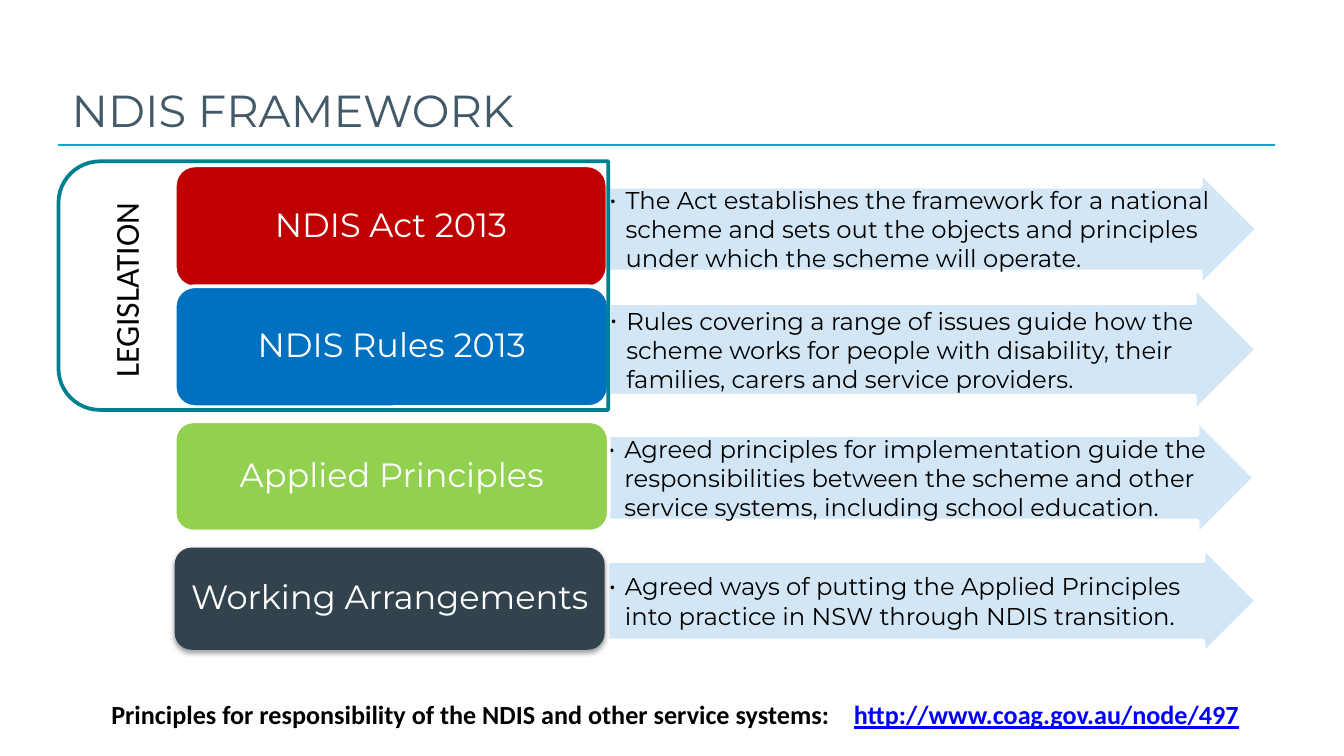
from lxml import etree
from pptx import Presentation
from pptx import util as u
from pptx.dml.color import RGBColor
from pptx.enum import shapes, text
from pptx.oxml import ns

TEAL = RGBColor(0x00, 0xAB, 0xC3)
FRAME = RGBColor(0x00, 0x7F, 0x90)
SLATE = RGBColor(0x42, 0x59, 0x68)
PALE = RGBColor(0xCF, 0xE4, 0xF4)
RED = RGBColor(0xC0, 0x00, 0x00)
BLUE = RGBColor(0x00, 0x70, 0xC0)
GREEN = RGBColor(0x92, 0xD0, 0x50)
DARK = RGBColor(0x32, 0x43, 0x4E)
LINK = RGBColor(0x00, 0x00, 0xFF)
WHITE = RGBColor(0xFF, 0xFF, 0xFF)
BLACK = RGBColor(0x00, 0x00, 0x00)

# The slide is a grid of square cells, 100 columns by 56.25 rows (16:9).
CELL = u.Inches(0.1)
kind = shapes.MSO_SHAPE
mid = text.MSO_ANCHOR.MIDDLE
deck = Presentation()
deck.slide_width, deck.slide_height = 100 * CELL, int(56.25 * CELL)
slide = deck.slides.add_slide(deck.slide_layouts[6])


def draw(form, area, fill=None, line=None):
    """Add a preset shape over an area (column, row, columns, rows)."""
    shape = slide.shapes.add_shape(form, *[int(n * CELL) for n in area])
    shape.shadow.inherit = False
    if fill is None:
        shape.fill.background()
    else:
        shape.fill.solid()
        shape.fill.fore_color.rgb = fill
    if line is None:
        shape.line.fill.background()
    else:
        shape.line.color.rgb = line
        shape.line.width = u.Pt(2)
    return shape


def write(words, area, size, color, face="Montserrat", align=None,
          anchor=text.MSO_ANCHOR.TOP, pad=(1, 0.5)):
    """Add a text box; pad is its side and top margin in cells."""
    box = slide.shapes.add_textbox(*[int(n * CELL) for n in area])
    frame = box.text_frame
    frame.word_wrap = True
    frame.vertical_anchor = anchor
    frame.margin_left = frame.margin_right = int(pad[0] * CELL)
    frame.margin_top = frame.margin_bottom = int(pad[1] * CELL)
    para = frame.paragraphs[0]
    para.text = words
    para.alignment = align
    para.font.name, para.font.size = face, u.Pt(size)
    para.font.color.rgb = color
    return box


# Heading and its rule
write("NDIS FRAMEWORK", (4.35, 2.85, 90.6, 7.8), 24, SLATE,
      anchor=text.MSO_ANCHOR.BOTTOM)
rule = slide.shapes.add_connector(
    shapes.MSO_CONNECTOR.STRAIGHT,
    *[int(n * CELL) for n in (4.3, 10.8, 94.9, 10.8)])
rule.line.color.rgb = TEAL
rule.line.width = u.Pt(1)
etree.SubElement(rule._element.spPr, ns.qn("a:effectLst"))

# Label, fill, box (row, columns, rows), arrow (column, row, columns, rows), note
rows = [
    ("NDIS Act 2013", RED, (12.3, 32.2, 9.1), (45.25, 12.85, 48.3, 8.4),
     "The Act establishes the framework for a national scheme and sets out "
     "the objects and principles under which the scheme will operate."),
    ("NDIS Rules 2013", BLUE, (21.3, 32.3, 9), (45.3, 21.4, 48.2, 9.2),
     "Rules covering a range of issues guide how the scheme works for people "
     "with disability, their families, carers and service providers."),
    ("Applied Principles", GREEN, (31.35, 32.3, 8.2), (45.15, 31.3, 48.2, 8.5),
     "Agreed principles for implementation guide the responsibilities between "
     "the scheme and other service systems, including school education."),
    ("Working Arrangements", DARK, (40.75, 32, 7.6), (45.2, 40.75, 48.3, 7.9),
     "Agreed ways of putting the Applied Principles into practice in NSW "
     "through NDIS transition."),
]
for label, fill, (top, wide, high), area, note in rows:
    arrow = draw(kind.RIGHT_ARROW, area, PALE, WHITE)
    arrow.adjustments[0], arrow.adjustments[1] = 0.75, 0.5
    tint = arrow._element.spPr.find(".//" + ns.qn("a:srgbClr"))
    etree.SubElement(tint, ns.qn("a:alpha"), val="90000")

    # The note fills the arrow's shaft and half the length of its head.
    x, y, w, h = area
    box = write(note, (x, y + h / 8, w - h * 0.375, h * 0.75), 13, BLACK,
                anchor=mid, pad=(0.1, 0.1))
    para = box.text_frame.paragraphs[0]
    para.level = 1
    props = para._p.get_or_add_pPr()
    props.set("marL", str(int(1.2 * CELL)))
    props.set("indent", str(int(-1.2 * CELL)))
    etree.SubElement(props, ns.qn("a:buFont"), typeface="Montserrat")
    etree.SubElement(props, ns.qn("a:buChar"), char="•")
    props.append(props.find(ns.qn("a:defRPr")))

    last = fill == DARK
    card = draw(kind.ROUNDED_RECTANGLE, (13, top, wide, high), fill,
                None if last else WHITE)
    if last:
        glow = etree.SubElement(
            card._element.spPr.find(ns.qn("a:effectLst")),
            ns.qn("a:outerShdw"), blurRad=str(u.Pt(3.1)),
            dist=str(u.Pt(1.6)), dir="5400000", rotWithShape="0")
        shade = etree.SubElement(glow, ns.qn("a:srgbClr"), val="000000")
        etree.SubElement(shade, ns.qn("a:alpha"), val="38000")
    box = write(label, (13.4, top + 0.4, wide - 0.8, high - 0.8), 18, WHITE,
                align=text.PP_ALIGN.CENTER, anchor=mid, pad=(0.7, 0.4))
    box.text_frame.paragraphs[0].line_spacing = 0.9

# Frame around the two legislation rows
draw(kind.ROUND_2_SAME_RECTANGLE, (15.55, 0.8, 18.5, 40.9),
     line=FRAME).rotation = 270
write("LEGISLATION", (-0.3, 19.6, 19.3, 4), 18, BLACK, "Calibri",
      text.PP_ALIGN.CENTER).rotation = 270

# Source line, with the address at a tab stop
foot = write("Principles for responsibility of the NDIS and other service "
             "systems:\t", (7.3, 51.5, 87.4, 3.4), 14, BLACK, "Calibri")
para = foot.text_frame.paragraphs[0]
para.font.bold = True
props = para._p.get_or_add_pPr()
tabs = etree.SubElement(props, ns.qn("a:tabLst"))
etree.SubElement(tabs, ns.qn("a:tab"), pos=str(int(55.25 * CELL)), algn="l")
props.append(props.find(ns.qn("a:defRPr")))
site = para.add_run()
site.text = "http://www.coag.gov.au/node/497"
site.font.underline = True
site.font.color.rgb = LINK

deck.save("out.pptx")
